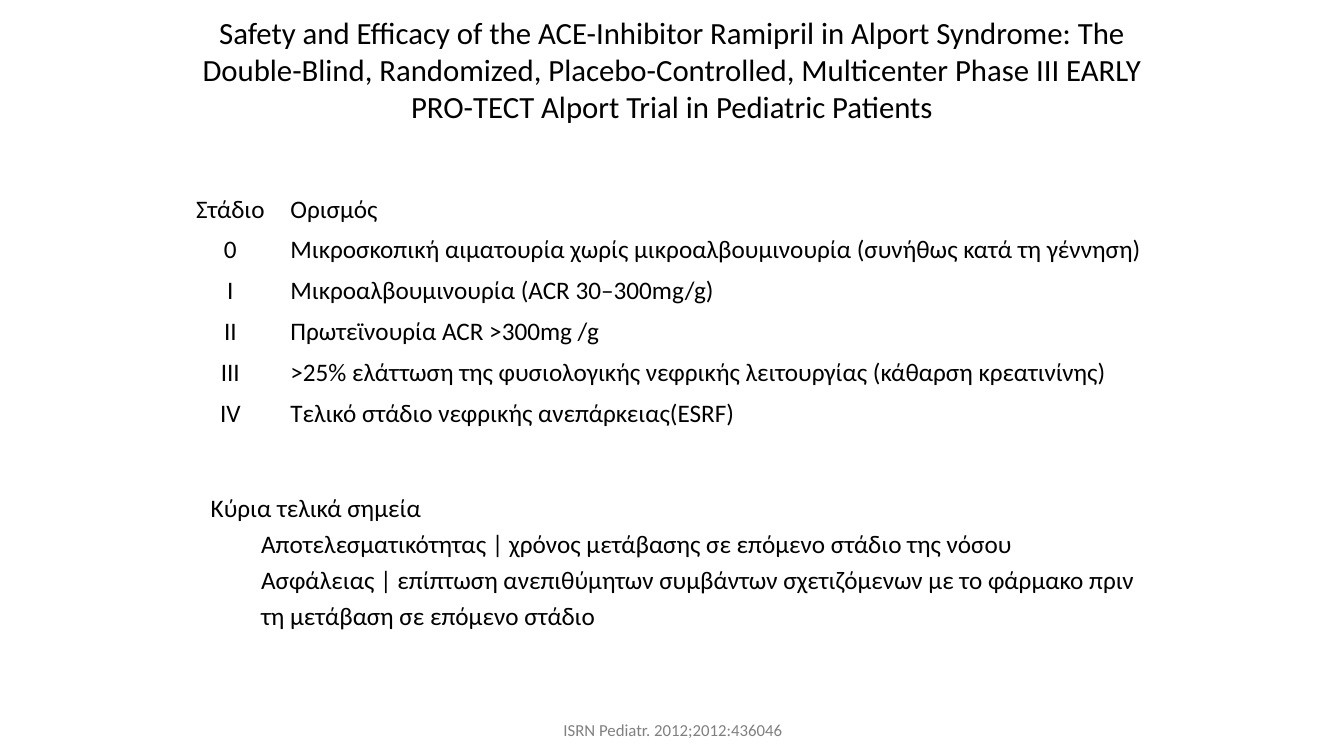
from lxml import etree
from pptx import Presentation
from pptx import util as u
from pptx.dml.color import RGBColor
from pptx.enum import text
from pptx.oxml.ns import qn

COLORS = {"text": "000000", "citation": "808080"}
FONT = "Calibri"
WIDTH, HEIGHT = 13.33, 7.5

TITLE = (
    "Safety and Efficacy of the ACE-Inhibitor Ramipril in Alport Syndrome: "
    "The Double-Blind, Randomized, Placebo-Controlled, Multicenter Phase III "
    "EARLY PRO-TECT Alport Trial in Pediatric Patients"
)
STAGES = [
    ("Στάδιο", "Ορισμός"),
    ("0", "Μικροσκοπική αιματουρία χωρίς μικροαλβουμινουρία (συνήθως κατά τη γέννηση)"),
    ("I", "Μικροαλβουμινουρία (ACR 30–300mg/g)"),
    ("II", "Πρωτεϊνουρία ACR >300mg /g"),
    ("III", ">25% ελάττωση της φυσιολογικής νεφρικής λειτουργίας (κάθαρση κρεατινίνης)"),
    ("IV", "Τελικό στάδιο νεφρικής ανεπάρκειας(ESRF)"),
]
ENDPOINTS = [
    (0, "Κύρια τελικά σημεία"),
    (1, "Αποτελεσματικότητας | χρόνος μετάβασης σε επόμενο στάδιο της νόσου"),
    (1, "Ασφάλειας | επίπτωση ανεπιθύμητων συμβάντων σχετιζόμενων με το φάρμακο "
        "πριν τη μετάβαση σε επόμενο στάδιο"),
]
CITATION = "ISRN Pediatr. 2012;2012:436046"


def place(shape, box):
    shape.left, shape.top, shape.width, shape.height = map(u.Inches, box)


def write(paragraph, words, size, color="text", align=text.PP_ALIGN.LEFT):
    paragraph.alignment = align
    run = paragraph.add_run()
    run.text = words
    run.font.name = FONT
    run.font.size = u.Pt(size)
    run.font.color.rgb = RGBColor.from_string(COLORS[color])


def add_title(slide, box):
    title = slide.shapes.title
    place(title, box)
    frame = title.text_frame
    frame.auto_size = text.MSO_AUTO_SIZE.NONE
    frame.vertical_anchor = text.MSO_ANCHOR.MIDDLE
    frame.margin_left = frame.margin_right = u.Inches(0.08)
    write(frame.paragraphs[0], TITLE, 22, align=text.PP_ALIGN.CENTER)


def add_stage_table(slide, box):
    left, top, width, height = map(u.Inches, box)
    table = slide.shapes.add_table(len(STAGES), 2, left, top, width, height).table
    table.first_row = table.horz_banding = False
    # The stage column takes a tenth of the width
    table.columns[0].width = int(width * 0.1)
    table.columns[1].width = width - table.columns[0].width
    alignments = (text.PP_ALIGN.CENTER, text.PP_ALIGN.LEFT)
    for row, stage in enumerate(STAGES):
        for column, words in enumerate(stage):
            cell = table.cell(row, column)
            cell.fill.background()
            cell.vertical_anchor = text.MSO_ANCHOR.MIDDLE
            write(cell.text_frame.paragraphs[0], words, 18, align=alignments[column])


def add_endpoints(slide, box):
    body = slide.placeholders[1]
    place(body, box)
    frame = body.text_frame
    frame.auto_size = text.MSO_AUTO_SIZE.NONE
    for index, (level, words) in enumerate(ENDPOINTS):
        paragraph = frame.add_paragraph() if index else frame.paragraphs[0]
        paragraph.level = level
        paragraph.line_spacing = 1.2
        paragraph.space_before = u.Pt(0)
        write(paragraph, words, 18)
        # Indent by level, without a bullet
        properties = paragraph._p.get_or_add_pPr()
        properties.set("marL", str(u.Inches(0.5 * level)))
        properties.set("indent", "0")
        etree.SubElement(properties, qn("a:buNone"))


def add_citation(slide, box):
    frame = slide.shapes.add_textbox(*map(u.Inches, box)).text_frame
    frame.word_wrap = True
    write(frame.paragraphs[0], CITATION, 12, "citation", text.PP_ALIGN.CENTER)


def main():
    presentation = Presentation()
    presentation.slide_width = u.Inches(WIDTH)
    presentation.slide_height = u.Inches(HEIGHT)
    slide = presentation.slides.add_slide(presentation.slide_layouts[1])
    add_title(slide, (WIDTH / 8, 0.08, WIDTH * 0.75, 1.21))
    add_stage_table(slide, (1.79, HEIGHT / 4, 9.9, 0.4 * len(STAGES)))
    add_endpoints(slide, (1.99, 4.77, 9.5, 1.56))
    add_citation(slide, (1.8, 7.09, 9.75, 0.3))
    presentation.save("out.pptx")


if __name__ == "__main__":
    main()
